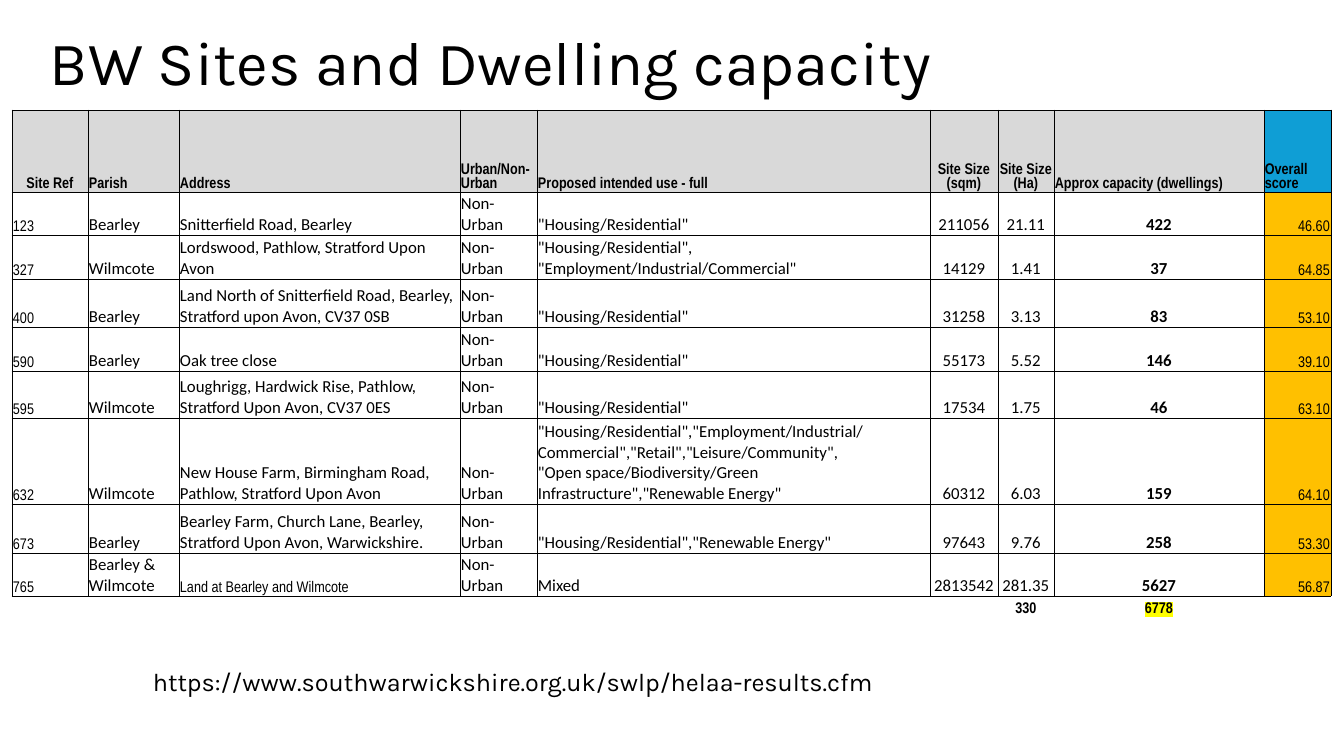
from lxml.etree import SubElement
from pptx import Presentation
from pptx.dml.color import RGBColor
from pptx.enum.text import MSO_ANCHOR, PP_ALIGN
from pptx.oxml.ns import qn
from pptx.util import Emu, Pt

PX = 914400 / 100.8
BLACK, WHITE, GREY = "000000", "FFFFFF", "D9D9D9"
BLUE, AMBER, YELLOW = "0F9ED5", "FFC000", "FFFF00"
NO_STYLE = "{2D5ABB26-0587-4C30-8999-92F81FD0307C}"
NARROW, BODY, DISPLAY = "Arial Narrow", "Calibri", "Karla"
LEFT, CENTRE, RIGHT = PP_ALIGN.LEFT, PP_ALIGN.CENTER, PP_ALIGN.RIGHT

COLUMN_WIDTHS = [76, 91, 281, 77, 393, 68, 56, 210, 67]
ROW_HEIGHTS = [82, 43, 44, 48, 44, 47, 86, 49, 43, 21]
REF, PARISH, ADDRESS, URBAN, USE, SQM, HECTARES, CAPACITY, SCORE = range(9)

HEADINGS = ["Site Ref", "Parish", "Address", "Urban/Non-Urban",
            "Proposed intended use - full", "Site Size (sqm)",
            "Site Size (Ha)", "Approx capacity (dwellings)", "Overall score"]
HOUSING = '"Housing/Residential"'
LAST_ADDRESS = "Land at Bearley and Wilmcote"
# Every site is "Non-Urban", so that column is filled in by rule.
SITES = [
    ("123", "Bearley", "Snitterfield Road, Bearley",
     HOUSING, "211056", "21.11", "422", "46.60"),
    ("327", "Wilmcote", "Lordswood, Pathlow, Stratford Upon Avon",
     HOUSING + ',\n"Employment/Industrial/Commercial"',
     "14129", "1.41", "37", "64.85"),
    ("400", "Bearley",
     "Land North of Snitterfield Road, Bearley, Stratford upon Avon, CV37 0SB",
     HOUSING, "31258", "3.13", "83", "53.10"),
    ("590", "Bearley", "Oak tree close",
     HOUSING, "55173", "5.52", "146", "39.10"),
    ("595", "Wilmcote",
     "Loughrigg, Hardwick Rise, Pathlow, Stratford Upon Avon, CV37 0ES",
     HOUSING, "17534", "1.75", "46", "63.10"),
    ("632", "Wilmcote",
     "New House Farm, Birmingham Road, Pathlow, Stratford Upon Avon",
     HOUSING + ',"Employment/Industrial/Commercial","Retail","Leisure/Community",\n'
     '"Open space/Biodiversity/Green Infrastructure","Renewable Energy"',
     "60312", "6.03", "159", "64.10"),
    ("673", "Bearley",
     "Bearley Farm, Church Lane, Bearley, Stratford Upon Avon, Warwickshire.",
     HOUSING + ',"Renewable Energy"', "97643", "9.76", "258", "53.30"),
    ("765", "Bearley & Wilmcote", LAST_ADDRESS,
     "Mixed", "2813542", "281.35", "5627", "56.87"),
]
TOTALS = [""] * HECTARES + ["330", "6778", ""]


def px(length):
    return Emu(round(length * PX))


def color(hex_text):
    return RGBColor.from_string(hex_text)


def set_font(paragraph, name, size, bold=False):
    font = paragraph.font
    font.name, font.size, font.bold = name, Pt(size), bold
    font.color.rgb = color(BLACK)


def add_text(slide, box, text, size):
    shape = slide.shapes.add_textbox(*map(px, box))
    frame = shape.text_frame
    frame.word_wrap = True
    frame.text = text
    set_font(frame.paragraphs[0], DISPLAY, size)
    return frame


def add_borders(cell, sides):
    """Draw thin black lines on the sides named by letters, in the order LRTB."""
    properties = cell._tc.get_or_add_tcPr()
    for side in sides:
        line = SubElement(properties, qn(f"a:ln{side}"), w=str(Pt(0.5)))
        fill = SubElement(line, qn("a:solidFill"))
        SubElement(fill, qn("a:srgbClr"), val=BLACK)


def highlight(run, hex_text):
    mark = SubElement(run.font._element, qn("a:highlight"))
    SubElement(mark, qn("a:srgbClr"), val=hex_text)


def fill_cell(cell, text, alignment, font, borders, fill):
    """Write a cell; font is (name, size, bold) and a fill of None is clear."""
    cell.margin_left = cell.margin_right = cell.margin_top = px(1)
    cell.margin_bottom = 0
    cell.vertical_anchor = MSO_ANCHOR.BOTTOM
    add_borders(cell, borders)
    if fill:
        cell.fill.solid()
        cell.fill.fore_color.rgb = color(fill)
    else:
        cell.fill.background()
    cell.text_frame.text = text
    for paragraph in cell.text_frame.paragraphs:
        paragraph.alignment = alignment
        set_font(paragraph, *font)
        if not text:
            SubElement(paragraph._p, qn("a:endParaRPr"), sz=str(font[1] * 100))


def fill_header(table):
    for column, heading in enumerate(HEADINGS):
        alignment = CENTRE if column in (REF, SQM, HECTARES) else LEFT
        fill = BLUE if column == SCORE else GREY
        fill_cell(table.cell(0, column), heading, alignment,
                  (NARROW, 11, True), "LRTB", fill)


def fill_sites(table):
    alignments = {SQM: CENTRE, HECTARES: CENTRE, CAPACITY: CENTRE, SCORE: RIGHT}
    borders = {USE: "LTB", SQM: "RTB"}
    for row, site in enumerate(SITES, start=1):
        values = [*site[:URBAN], "Non-Urban", *site[URBAN:]]
        for column, value in enumerate(values):
            narrow = column in (REF, SCORE) or value == LAST_ADDRESS
            name, size = (NARROW, 11) if narrow else (BODY, 12)
            fill_cell(table.cell(row, column), value,
                      alignments.get(column, LEFT),
                      (name, size, column == CAPACITY),
                      borders.get(column, "LRTB"),
                      AMBER if column == SCORE else WHITE)


def fill_totals(table):
    row = len(SITES) + 1
    for column, total in enumerate(TOTALS):
        fill_cell(table.cell(row, column), total, CENTRE,
                  (NARROW, 11, True), "T", None)
    capacity = table.cell(row, CAPACITY).text_frame.paragraphs[0]
    highlight(capacity.runs[0], YELLOW)


def add_sites_table(slide, left, top):
    frame = slide.shapes.add_table(
        len(ROW_HEIGHTS), len(COLUMN_WIDTHS), px(left), px(top),
        px(sum(COLUMN_WIDTHS)), px(sum(ROW_HEIGHTS)))
    table = frame.table
    table.first_row = table.horz_banding = False
    table._tbl.tblPr.find(qn("a:tableStyleId")).text = NO_STYLE
    for column, width in zip(table.columns, COLUMN_WIDTHS):
        column.width = px(width)
    for row, height in zip(table.rows, ROW_HEIGHTS):
        row.height = px(height)
    fill_header(table)
    fill_sites(table)
    fill_totals(table)


def main():
    presentation = Presentation()
    presentation.slide_width, presentation.slide_height = px(1344), px(756)
    slide = presentation.slides.add_slide(presentation.slide_layouts[6])
    title = add_text(slide, (40, 23, 1159, 86),
                     "BW Sites and Dwelling capacity", 44)
    title.vertical_anchor = MSO_ANCHOR.MIDDLE
    title.paragraphs[0].line_spacing = 0.9
    add_sites_table(slide, 12, 110)
    add_text(slide, (143, 661, 861, 40),
             "https://www.southwarwickshire.org.uk/swlp/helaa-results.cfm", 18)
    presentation.save("out.pptx")


if __name__ == "__main__":
    main()
